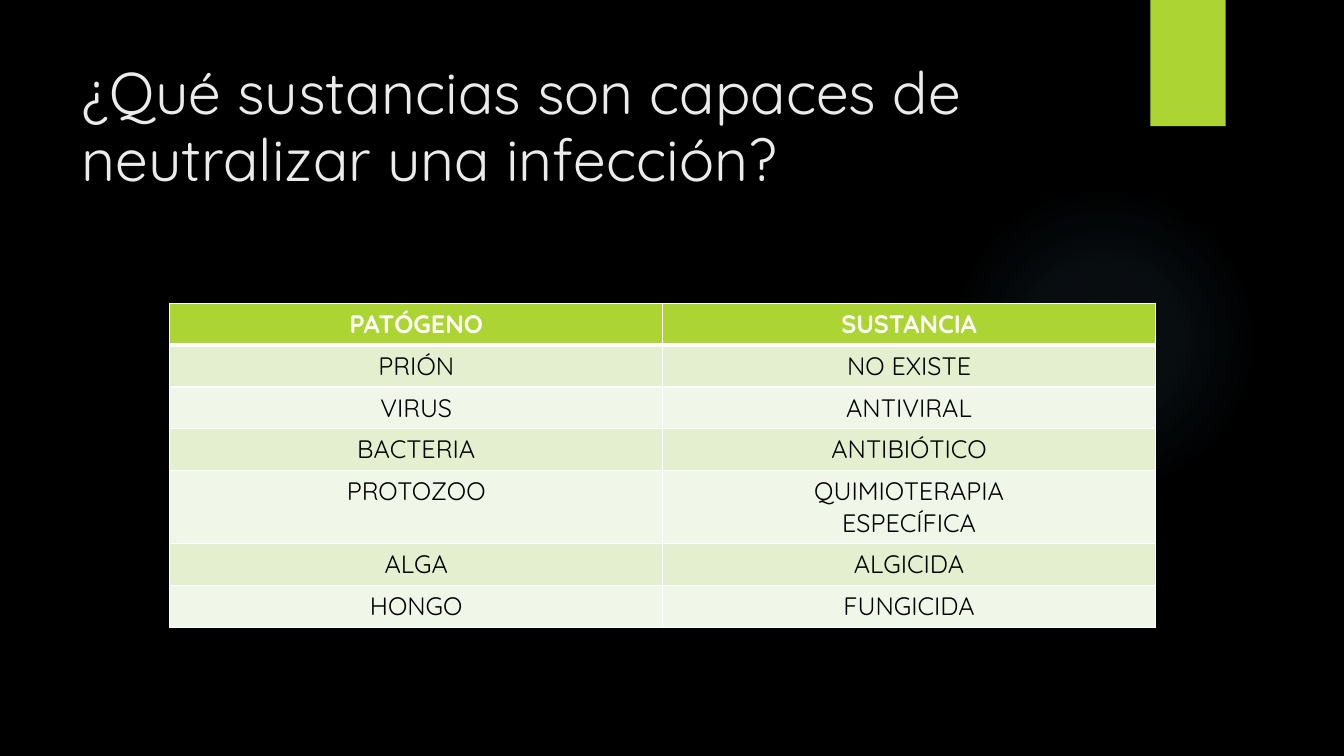
"""Build a slide with a table of pathogens and the substances that neutralise them."""
import pptx
import pptx.dml.color
import pptx.enum.shapes
import pptx.enum.text
import pptx.oxml
import pptx.oxml.ns
import pptx.util
from lxml import etree

Cm = pptx.util.Cm
Pt = pptx.util.Pt
FONT = "Quicksand"
COLOURS = {
    "background": "000000",
    "accent": "ACD433",
    "glow": "7AC4F0",
    "title": "EBEBEB",
    "white": "FFFFFF",
    "black": "000000",
    "band_dark": "E3EFCE",
    "band_light": "F1F7E8",
}
GLOW_STOPS = [(0, 7), (36, 6), (69, 0)]
TITLE = "¿Qué sustancias son capaces de neutralizar una infección?"
ROWS = [
    ("PATÓGENO", "SUSTANCIA"),
    ("PRIÓN", "NO EXISTE"),
    ("VIRUS", "ANTIVIRAL"),
    ("BACTERIA", "ANTIBIÓTICO"),
    ("PROTOZOO", "QUIMIOTERAPIA\nESPECÍFICA"),
    ("ALGA", "ALGICIDA"),
    ("HONGO", "FUNGICIDA"),
]


def colour(name):
    """Return the named colour as an RGB value."""
    return pptx.dml.color.RGBColor.from_string(COLOURS[name])


def add_span(para, text, size, ink, bold=False):
    """Add one formatted run to a paragraph."""
    span = para.add_run()
    span.text = text
    span.font.name = FONT
    span.font.size = Pt(size)
    span.font.bold = bold
    span.font.color.rgb = colour(ink)


def add_plain_shape(page, kind, left, top, width, height):
    """Add a preset shape without line or shadow, filled with the accent."""
    shape = page.shapes.add_shape(kind, Cm(left), Cm(top), Cm(width), Cm(height))
    shape.shadow.inherit = False
    shape.line.fill.background()
    shape.fill.solid()
    shape.fill.fore_color.rgb = colour("accent")
    return shape


def add_glow(page):
    """Add the faint round glow with a transparent radial gradient."""
    glow = add_plain_shape(page, pptx.enum.shapes.MSO_SHAPE.OVAL, 23.9, 4.65, 7.82, 7.82)
    stops = "".join(
        f'<a:gs pos="{place * 1000}"><a:srgbClr val="{COLOURS["glow"]}">'
        f'<a:alpha val="{alpha * 1000}"/></a:srgbClr></a:gs>'
        for place, alpha in GLOW_STOPS
    )
    gradient = pptx.oxml.parse_xml(
        f'<a:gradFill {pptx.oxml.ns.nsdecls("a")} rotWithShape="1"><a:gsLst>{stops}</a:gsLst>'
        '<a:path path="circle"><a:fillToRect l="50000" t="50000" r="50000" b="50000"/></a:path>'
        "</a:gradFill>"
    )
    properties = glow._element.spPr
    properties.replace(properties.find(pptx.oxml.ns.qn("a:solidFill")), gradient)


def format_title(page):
    """Place and fill the title placeholder."""
    title = page.shapes.title
    title.left, title.top, title.width, title.height = Cm(1.8), Cm(1.27), Cm(26.14), Cm(3.89)
    frame = title.text_frame
    frame.word_wrap = True
    frame.auto_size = pptx.enum.text.MSO_AUTO_SIZE.NONE
    frame.vertical_anchor = pptx.enum.text.MSO_ANCHOR.MIDDLE
    para = frame.paragraphs[0]
    para.alignment = pptx.enum.text.PP_ALIGN.LEFT
    para.line_spacing = 0.95
    add_span(para, TITLE, 42, "title")


def set_borders(cell, **widths):
    """Draw white cell borders of the given widths in points."""
    properties = cell._tc.get_or_add_tcPr()
    for side in ("L", "R", "T", "B"):
        tag = pptx.oxml.ns.qn(f"a:ln{side}")
        line = etree.SubElement(properties, tag, w=str(Pt(widths.get(side, 1))))
        fill = etree.SubElement(line, pptx.oxml.ns.qn("a:solidFill"))
        etree.SubElement(fill, pptx.oxml.ns.qn("a:srgbClr"), val=COLOURS["white"])


def fill_cell(cell, text, row):
    """Write one centred cell with the fill and borders of its row."""
    header = row == 0
    set_borders(cell, T=3 if row == 1 else 1, B=3 if header else 1)
    cell.fill.solid()
    band = "band_dark" if row % 2 else "band_light"
    cell.fill.fore_color.rgb = colour("accent" if header else band)
    frame = cell.text_frame
    for index, line in enumerate(text.split("\n")):
        para = frame.add_paragraph() if index else frame.paragraphs[0]
        para.alignment = pptx.enum.text.PP_ALIGN.CENTER
        add_span(para, line, 18, "white" if header else "black", header)


def add_substance_table(page):
    """Add the table of pathogens and substances."""
    row_height = Cm(1.03)
    table = page.shapes.add_table(
        len(ROWS), len(ROWS[0]), Cm(4.28), Cm(7.65), Cm(24.84), row_height * len(ROWS)
    ).table
    for row, texts in enumerate(ROWS):
        table.rows[row].height = row_height
        for column, text in enumerate(texts):
            fill_cell(table.cell(row, column), text, row)


def main():
    """Create the deck and save it."""
    deck = pptx.Presentation()
    deck.slide_width, deck.slide_height = Cm(33.87), Cm(19.05)
    page = deck.slides.add_slide(deck.slide_layouts.get_by_name("Title Only"))
    page.background.fill.solid()
    page.background.fill.fore_color.rgb = colour("background")
    add_glow(page)
    add_plain_shape(page, pptx.enum.shapes.MSO_SHAPE.RECTANGLE, 28.99, 0, 1.9, 3.18)
    format_title(page)
    add_substance_table(page)
    deck.save("out.pptx")


if __name__ == "__main__":
    main()
